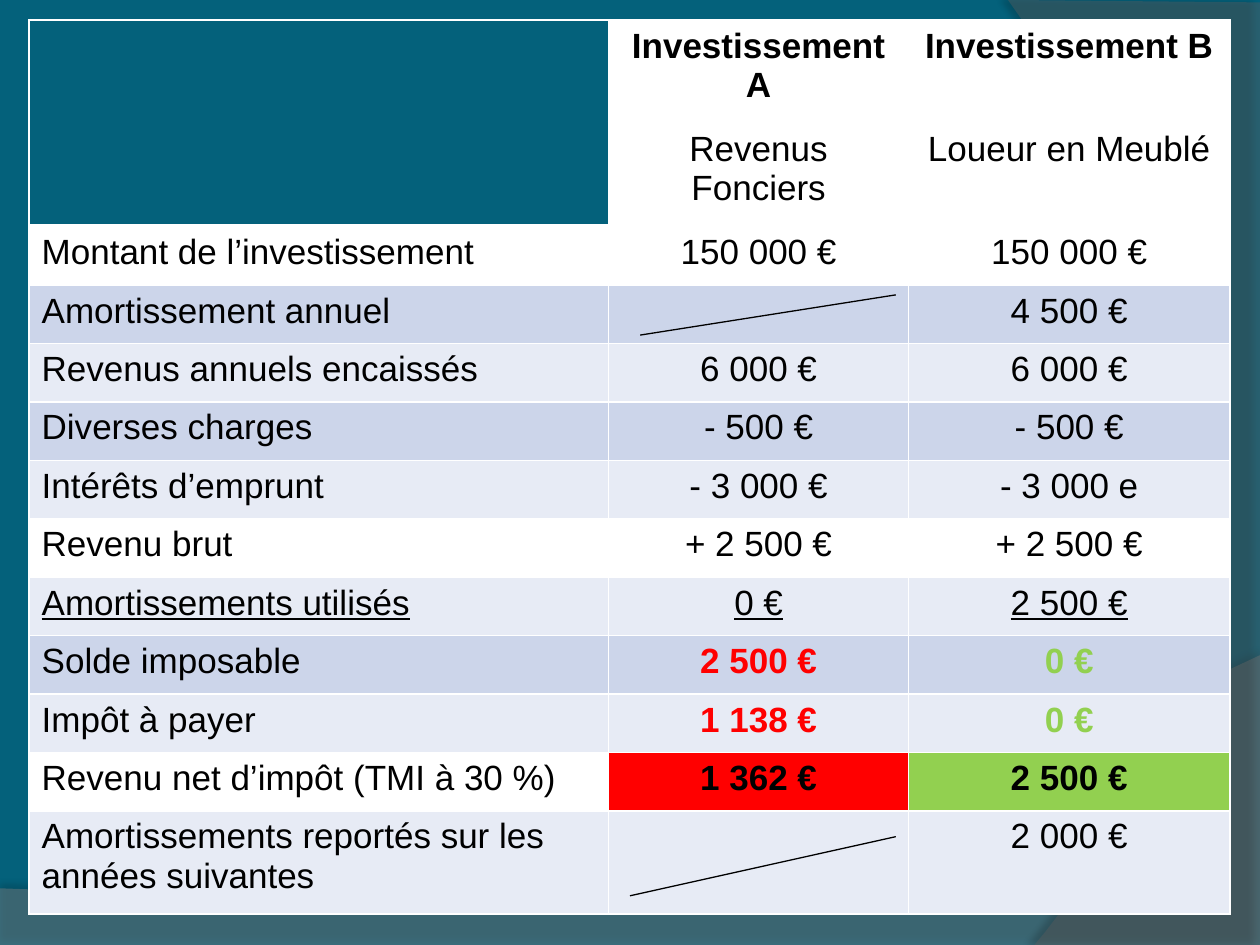
"""Build a slide comparing two property investments in a table."""
import pptx
import pptx.dml.color
import pptx.enum.shapes
import pptx.enum.text
import pptx.oxml
import pptx.oxml.ns
import pptx.util

Pt = pptx.util.Pt
COLORS = {
    "background": "04617B", "wave": "7F7F7F", "arc": "5E5E5E",
    "white": "FFFFFF", "dark": "CCD5EA", "light": "E7EBF5",
    "black": "000000", "red": "FF0000", "green": "92D050",
}
NS = pptx.oxml.ns.nsdecls("a")


def rgb(name):
    return pptx.dml.color.RGBColor.from_string(COLORS[name])


def bezier(p0, p1, p2, p3, steps=40):
    points = []
    for i in range(1, steps + 1):
        t = i / steps
        weights = ((1 - t) ** 3, 3 * t * (1 - t) ** 2, 3 * t ** 2 * (1 - t), t ** 3)
        points.append(tuple(
            sum(w * p[axis] for w, p in zip(weights, (p0, p1, p2, p3)))
            for axis in (0, 1)))
    return points


prs = pptx.Presentation()
prs.slide_width, prs.slide_height = Pt(720), Pt(540)
s = prs.slides.add_slide(prs.slide_layouts[6])
s.background.fill.solid()
s.background.fill.fore_color.rgb = rgb("background")

wave = [(0, 507.6), (0, 540.7), (720, 540.7), (720, 374.4)]
wave += bezier(wave[-1], (402.5, 524.9), (281.5, 517.7), (0, 507.6))
arc = [(720, 1.4), (720, 540), (591.1, 540)]
arc += bezier(arc[-1], (673.2, 445.7), (733, 216), (576, 0))

for points, color, alpha, shade, distance, angle in (
    (wave, "wave", 45, 35, 3.5, 270),
    (arc, "arc", 40, 45, 4, 180),
):
    vertices = [(Pt(x), Pt(y)) for x, y in points]
    builder = s.shapes.build_freeform(*vertices[0], scale=1.0)
    builder.add_line_segments(vertices[1:], close=True)
    sp = builder.convert_to_shape()
    sp.shadow.inherit = False
    sp.line.fill.background()
    sp.fill.solid()
    sp.fill.fore_color.rgb = rgb(color)
    clr = sp.fill._xPr.find(".//" + pptx.oxml.ns.qn("a:srgbClr"))
    clr.append(pptx.oxml.parse_xml(f'<a:alpha {NS} val="{alpha * 1000}"/>'))
    effects = sp._element.spPr.find(pptx.oxml.ns.qn("a:effectLst"))
    effects.append(pptx.oxml.parse_xml(
        f'<a:outerShdw {NS} blurRad="{Pt(4)}" dist="{Pt(distance)}" '
        f'dir="{angle * 60000}" algn="ctr" rotWithShape="0">'
        f'<a:srgbClr val="{COLORS["black"]}"><a:alpha val="{shade * 1000}"/>'
        '</a:srgbClr></a:outerShdw>'))

rows = [
    ("white", "", "Investissement A", "Investissement B"),
    ("white", "", "Revenus Fonciers", "Loueur en Meublé"),
    ("white", "Montant de l’investissement", "150 000 €", "150 000 €"),
    ("dark", "Amortissement annuel", "", "4 500 €"),
    ("light", "Revenus annuels encaissés", "6 000 €", "6 000 €"),
    ("dark", "Diverses charges", "- 500 €", "- 500 €"),
    ("light", "Intérêts d’emprunt", "- 3 000 €", "- 3 000 e"),
    ("white", "Revenu brut", "+ 2 500 €", "+ 2 500 €"),
    ("light", "Amortissements utilisés", "0 €", "2 500 €"),
    ("dark", "Solde imposable", "2 500 €", "0 €"),
    ("light", "Impôt à payer", "1 138 €", "0 €"),
    ("white", "Revenu net d’impôt (TMI à 30 %)", "1 362 €", "2 500 €"),
    ("light", "Amortissements reportés sur les années suivantes", "", "2 000 €"),
]
HEADER, UNDERLINED, TAXED, NET = 0, 8, (9, 10), 11
TALL = (0, 1, 12)
accents = {1: "red", 2: "green"}

frame = s.shapes.add_table(len(rows), 3, Pt(16.6), Pt(11.5), Pt(686.2), Pt(511))
table = frame.table
table.first_row = table.horz_banding = False
for column, width in zip(table.columns, (331.2, 171.4, 183.6)):
    column.width = Pt(width)

for i, (band, *texts) in enumerate(rows):
    table.rows[i].height = Pt(59 if i in TALL else 33.4)
    for j, text in enumerate(texts):
        cell = table.cell(i, j)
        if j == 0 and i < 2:
            cell.fill.background()
        else:
            cell.fill.solid()
            cell.fill.fore_color.rgb = rgb(accents[j] if i == NET and j else band)
        tcPr = cell._tc.get_or_add_tcPr()
        for k, side in enumerate(("lnL", "lnR", "lnT", "lnB")):
            width = 3 if i == HEADER and side == "lnB" else 1
            tcPr.insert(k, pptx.oxml.parse_xml(
                f'<a:{side} {NS} w="{Pt(width)}"><a:solidFill>'
                f'<a:srgbClr val="{COLORS["white"]}"/></a:solidFill></a:{side}>'))
        if not text:
            continue
        p = cell.text_frame.paragraphs[0]
        p.text = text
        if j:
            p.alignment = pptx.enum.text.PP_ALIGN.CENTER
        font = p.runs[0].font
        font.name, font.size = "Arial", Pt(20)
        font.bold = i == HEADER or (j > 0 and i in (*TAXED, NET))
        font.underline = i == UNDERLINED
        font.color.rgb = rgb(accents[j] if j and i in TAXED else "black")
table.cell(0, 0).merge(table.cell(1, 0))

for x1, y1, x2, y2 in ((365.8, 191.5, 511.9, 168.5), (360, 511.9, 511.9, 478.1)):
    line = s.shapes.add_connector(
        pptx.enum.shapes.MSO_CONNECTOR.STRAIGHT, Pt(x1), Pt(y1), Pt(x2), Pt(y2))
    line.line.color.rgb = rgb("black")
    line.line.width = Pt(0.75)
    line._element.spPr.append(pptx.oxml.parse_xml(f'<a:effectLst {NS}/>'))

prs.save("out.pptx")
